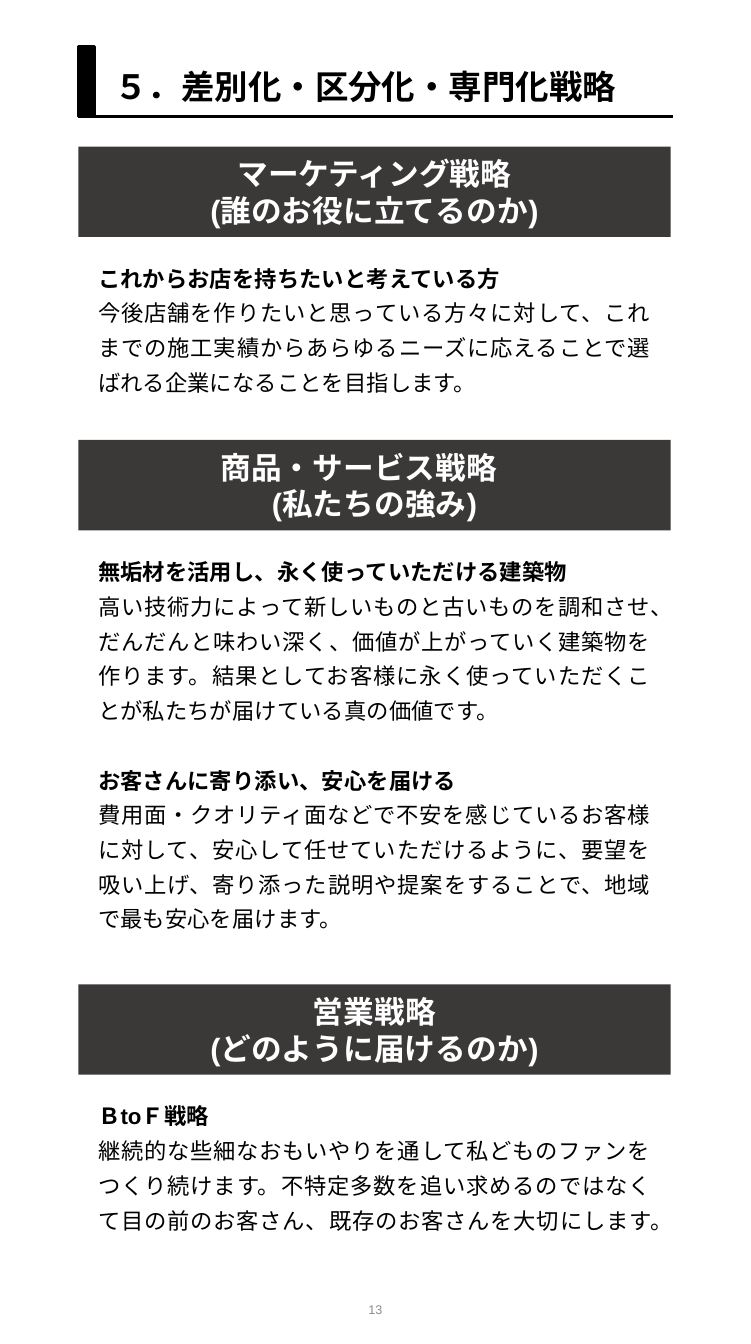
from dataclasses import dataclass

from lxml.etree import SubElement
from pptx import Presentation
from pptx.dml.color import RGBColor
from pptx.enum.lang import MSO_LANGUAGE_ID as Language
from pptx.enum.shapes import MSO_CONNECTOR as Connector, MSO_SHAPE as Shape
from pptx.enum.text import MSO_ANCHOR as Anchor, MSO_AUTO_SIZE as AutoSize, PP_ALIGN as Align
from pptx.oxml.ns import qn
from pptx.util import Inches, Pt


@dataclass(frozen=True)
class Theme:
    font: str = "Arial"
    ink: RGBColor = RGBColor(0, 0, 0)
    band: RGBColor = RGBColor(0x3B, 0x38, 0x38)
    light: RGBColor = RGBColor(255, 255, 255)
    muted: RGBColor = RGBColor(0x8C, 0x8C, 0x8C)
    title_size: float = 12
    band_size: float = 11
    body_size: float = 8
    number_size: float = 4.5
    body_spacing: float = 1.3
    topic_gap: float = 12.5
    left: float = 0.39
    width: float = 2.95
    band_height: float = 0.45
    body_offset: float = 0.5


class StrategyPage:
    def __init__(self, slide, theme):
        self.slide = slide
        self.theme = theme

    def format(self, para, size, color, align, bold=False):
        para.alignment = align
        font = para.font
        font.size = Pt(size)
        font.bold = bold
        font.name = self.theme.font
        font.color.rgb = color
        font.language_id = Language.JAPANESE
        properties = para._p.pPr.find(qn("a:defRPr"))
        SubElement(properties, qn("a:ea"), typeface=self.theme.font)

    def title(self, text):
        title = self.slide.shapes.title
        title.left, title.top = Inches(0.47), Inches(0.28)
        title.width, title.height = Inches(2.85), Inches(0.3)
        frame = title.text_frame
        frame.text = text
        frame.word_wrap = True
        frame.auto_size = AutoSize.NONE
        frame.vertical_anchor = Anchor.TOP
        self.format(frame.paragraphs[0], self.theme.title_size, self.theme.ink, Align.LEFT, True)

    def rule(self, left, right, top):
        rule = self.slide.shapes.add_connector(
            Connector.STRAIGHT, Inches(left), Inches(top), Inches(right), Inches(top))
        rule.line.color.rgb = self.theme.ink
        rule.line.width = Pt(1)
        SubElement(rule._element.spPr, qn("a:effectLst"))

    def block(self, left, top, width, height, color):
        block = self.slide.shapes.add_shape(
            Shape.RECTANGLE, Inches(left), Inches(top), Inches(width), Inches(height))
        block.shadow.inherit = False
        block.fill.solid()
        block.fill.fore_color.rgb = color
        block.line.fill.background()
        return block

    def marker(self, left, top, width, height):
        marker = self.block(left, top, width, height, self.theme.ink)
        marker.line.color.rgb = self.theme.ink
        marker.line.width = Pt(1)

    def band(self, top, lines):
        theme = self.theme
        band = self.block(theme.left, top, theme.width, theme.band_height, theme.band)
        frame = band.text_frame
        frame.text = "\n".join(lines)
        frame.vertical_anchor = Anchor.MIDDLE
        for para in frame.paragraphs:
            self.format(para, theme.band_size, theme.light, Align.CENTER, True)

    def text_box(self, left, top, width, height, lines):
        box = self.slide.shapes.add_textbox(
            Inches(left), Inches(top), Inches(width), Inches(height))
        box.text_frame.word_wrap = True
        box.text_frame.text = "\n".join(lines)
        return box.text_frame

    def body(self, top, height, topics):
        theme = self.theme
        lines = [line for topic in topics for line in topic]
        frame = self.text_box(theme.left, top, theme.width, height, lines)
        for index, para in enumerate(frame.paragraphs):
            is_heading = index % 2 == 0
            self.format(para, theme.body_size, theme.ink, Align.JUSTIFY, is_heading)
            para.line_spacing = theme.body_spacing
            if is_heading and index:
                para.space_before = Pt(theme.topic_gap)

    def section(self, top, body_height, heading, topics):
        self.band(top, heading)
        self.body(top + self.theme.body_offset, body_height, topics)

    def page_number(self, number):
        frame = self.text_box(1.45, 6.34, 0.84, 0.36, [number])
        frame.vertical_anchor = Anchor.MIDDLE
        self.format(frame.paragraphs[0], self.theme.number_size, self.theme.muted, Align.CENTER)


SECTIONS = [
    (0.73, 0.79, ["マーケティング戦略", "(誰のお役に立てるのか)"], [
        ("これからお店を持ちたいと考えている方",
         "今後店舗を作りたいと思っている方々に対して、これまでの施工実績からあらゆるニーズに"
         "応えることで選ばれる企業になることを目指します。"),
    ]),
    (2.19, 2.01, ["商品・サービス戦略　", "(私たちの強み)"], [
        ("無垢材を活用し、永く使っていただける建築物",
         "高い技術力によって新しいものと古いものを調和させ、だんだんと味わい深く、価値が"
         "上がっていく建築物を作ります。結果としてお客様に永く使っていただくことが"
         "私たちが届けている真の価値です。"),
        ("お客さんに寄り添い、安心を届ける",
         "費用面・クオリティ面などで不安を感じているお客様に対して、安心して任せていただける"
         "ように、要望を吸い上げ、寄り添った説明や提案をすることで、地域で最も安心を届けます。"),
    ]),
    (4.9, 0.79, ["営業戦略", "(どのように届けるのか)"], [
        ("ＢtoＦ戦略",
         "継続的な些細なおもいやりを通して私どものファンをつくり続けます。不特定多数を"
         "追い求めるのではなくて目の前のお客さん、既存のお客さんを大切にします。"),
    ]),
]


def main():
    deck = Presentation()
    deck.slide_width, deck.slide_height = Inches(3.74), Inches(6.69)
    title_only = deck.slide_layouts.get_by_name("Title Only")
    page = StrategyPage(deck.slides.add_slide(title_only), Theme())
    page.rule(0.39, 3.35, 0.58)
    page.marker(0.39, 0.23, 0.08, 0.35)
    page.title("５．差別化・区分化・専門化戦略")
    for section in SECTIONS:
        page.section(*section)
    page.page_number("13")
    deck.save("out.pptx")


if __name__ == "__main__":
    main()
